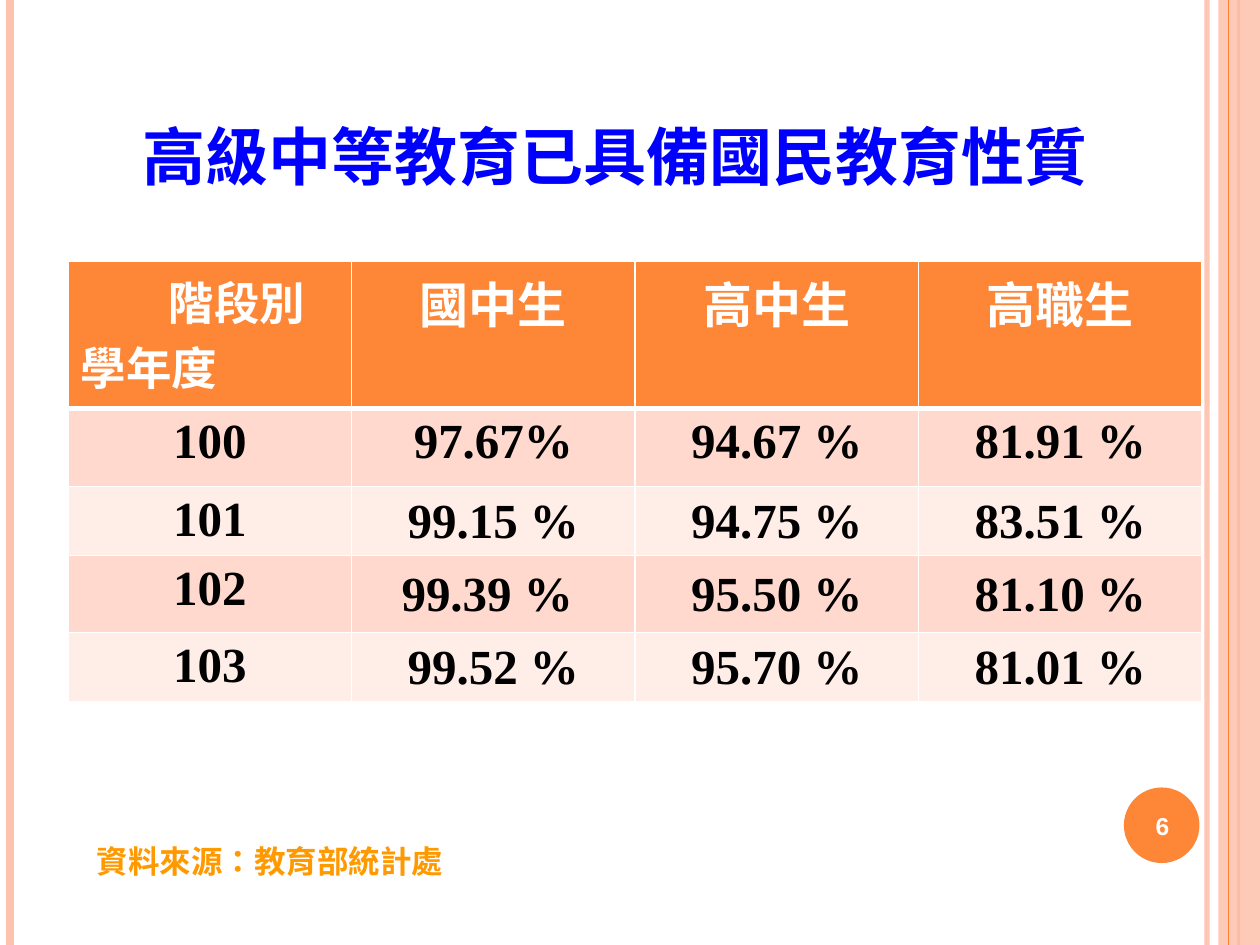
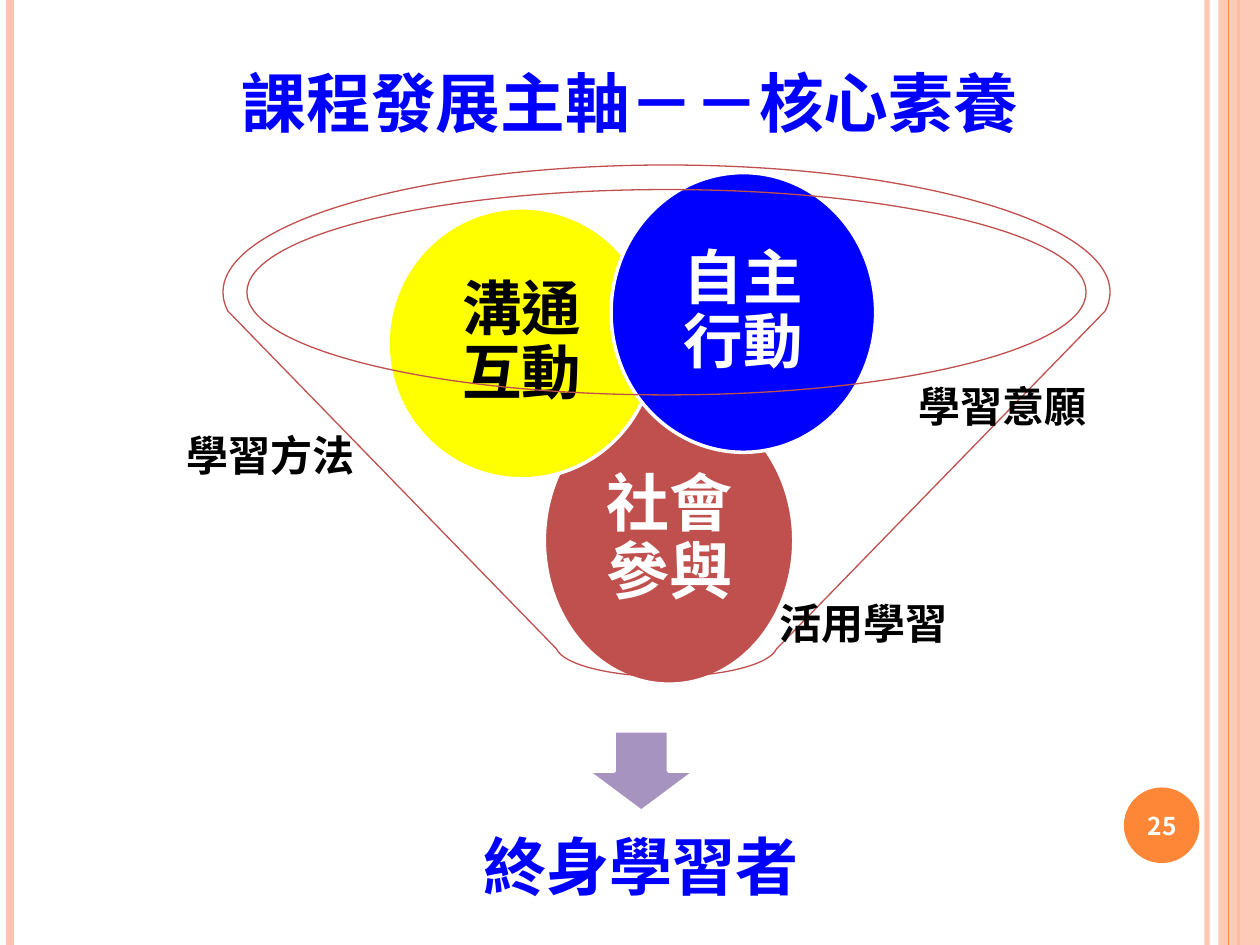
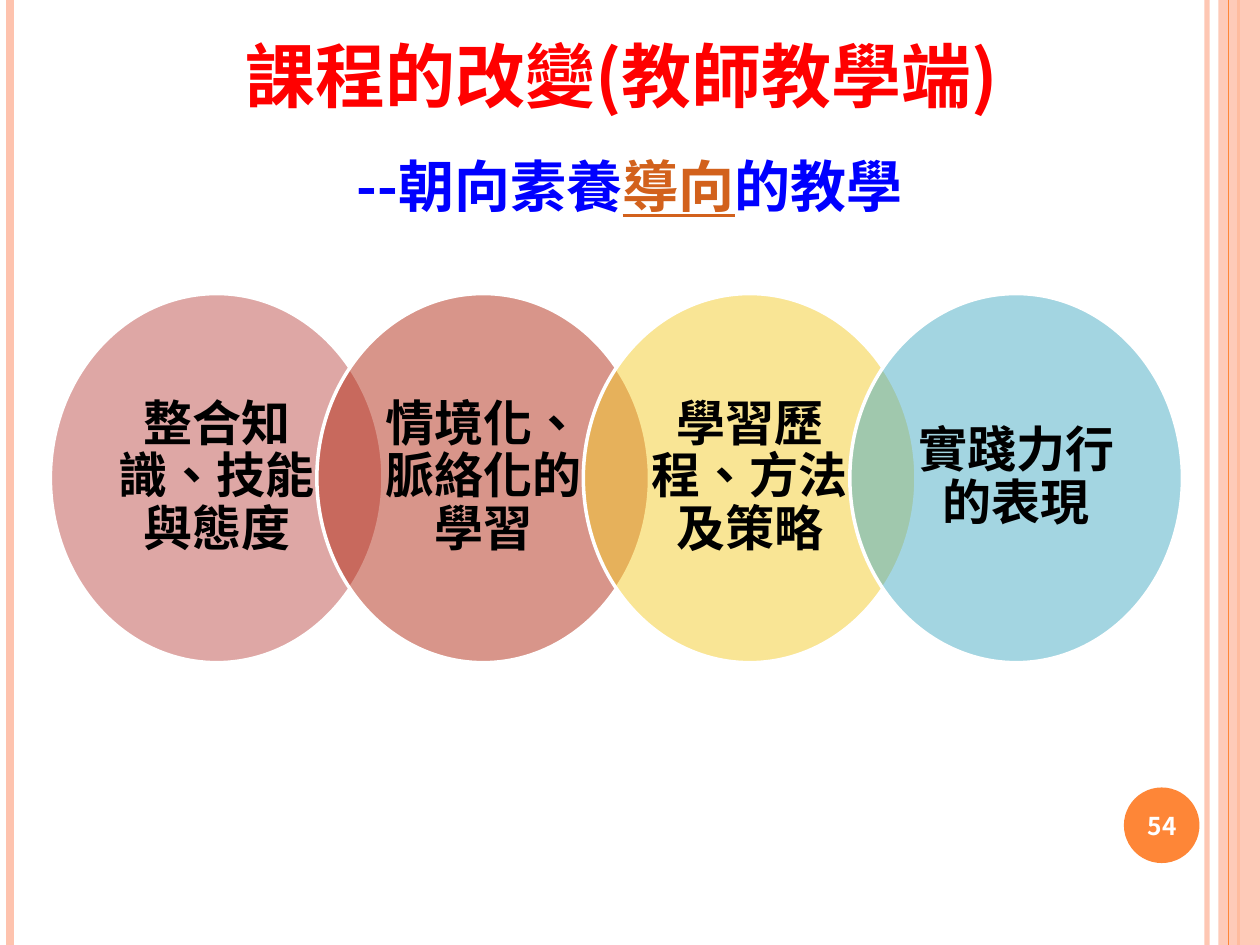
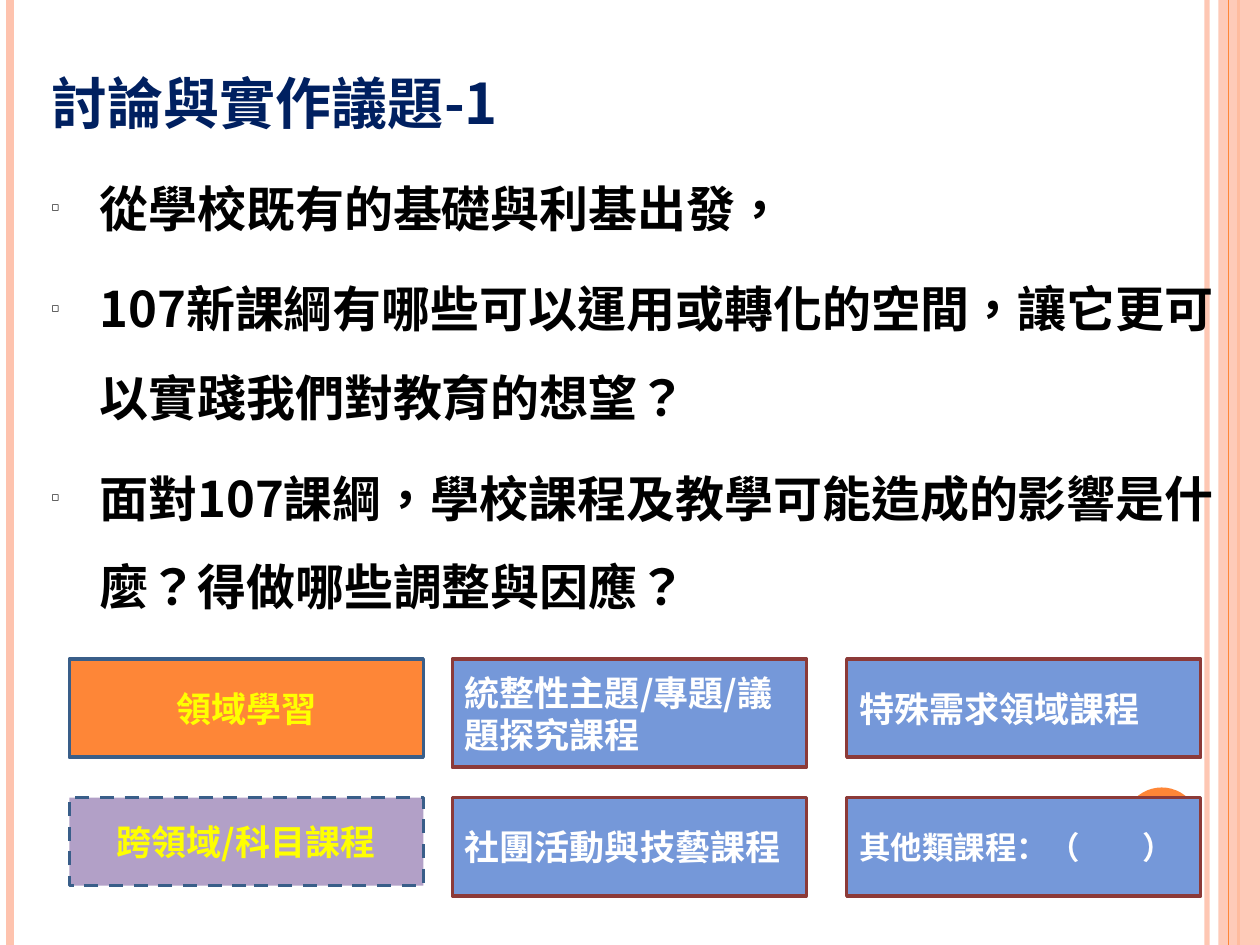
from math import cos, radians, sin, tan

from lxml import etree
from pptx import Presentation
from pptx.dml.color import RGBColor
from pptx.enum.dml import MSO_LINE
from pptx.enum.shapes import MSO_CONNECTOR, MSO_SHAPE
from pptx.enum.text import MSO_ANCHOR, MSO_AUTO_SIZE, PP_ALIGN
from pptx.oxml.ns import qn
from pptx.util import Inches, Pt

LEFT, CENTER = PP_ALIGN.LEFT, PP_ALIGN.CENTER
TOP, MIDDLE = MSO_ANCHOR.TOP, MSO_ANCHOR.MIDDLE
NO_AUTOFIT = MSO_AUTO_SIZE.NONE
STRAIGHT = MSO_CONNECTOR.STRAIGHT
OVAL, BOX, DOWN_ARROW = MSO_SHAPE.OVAL, MSO_SHAPE.RECTANGLE, MSO_SHAPE.DOWN_ARROW
DASH = MSO_LINE.DASH

SANS, SERIF, PLAIN = "Noto Sans CJK SC", "Times New Roman", "Arial"
TAIWAN, MAINLAND = "zh-TW", "zh-CN"
WHITE, BLACK, BLUE, RED, YELLOW = "FFFFFF", "000000", "0000FF", "FF0000", "FFFF00"
ORANGE, PEACH, NAVY, LINK, GOLD = "FE8637", "FEC3AE", "002060", "D2611C", "FF9900"
BRICK, LILAC = "BF504D", "A793BF"
PERIWINKLE, MAROON, STEEL, LAVENDER = "7598D9", "8C3A38", "395E89", "B2A0C7"

RULES = [
    (9.58, PEACH, 3, 93),
    (0.08, PEACH, 4.5, 100),
    (9.83, ORANGE, 1.5, 100),
    (9.75, ORANGE, 0.75, 100),
]

ENROLMENT_TITLE = "高級中等教育已具備國民教育性質"
ENROLMENT_HEAD = ["國中生", "高中生", "高職生"]
ENROLMENT_AXES = ["階段別", "學年度"]
ENROLMENT = [
    ["100", "97.67%", "94.67 %", "81.91 %"],
    ["101", "99.15 %", "94.75 %", "83.51 %"],
    ["102", "99.39 % ", "95.50 %", "81.10 %"],
    ["103", "99.52 %", "95.70 %", "81.01 %"],
]
ENROLMENT_HEIGHTS = [1.17, 0.62, 0.55, 0.61, 0.55]
ENROLMENT_BANDS = ["FFD9CE", "FFEDE8"]
ENROLMENT_SOURCE = "資料來源：教育部統計處"

LITERACY_TITLE = "課程發展主軸－－核心素養"
LITERACIES = [
    ("社會參與", (4.32, 3.15, 1.98, 2.28), BRICK, WHITE, 36),
    ("溝通互動", (3.08, 1.65, 2.12, 2.15), YELLOW, BLACK, 34),
    ("自主行動", (4.85, 1.37, 2.1, 2.22), BLUE, WHITE, 34),
]
LEARNING = [
    ("學習意願", 7.19, 2.97, LEFT),
    ("學習方法", 1.25, 3.36, CENTER),
    ("活用學習", 6.09, 4.69, LEFT),
]
LITERACY_GOAL = "終身學習者"

TEACHING_TITLE = "課程的改變(教師教學端)"
TEACHING_SUBTITLE = [("--朝向素養", {}), ("導向", {"color": LINK, "underline": True}), ("的教學", {})]
TEACHING = [
    ("整合知識、技能與態度", BRICK),
    ("情境化、脈絡化的學習", "B32C16"),
    ("學習歷程、方法及策略", "F5CD2D"),
    ("實踐力行的表現", "49ACC5"),
]

DISCUSSION_TITLE = "討論與實作議題-1"
DISCUSSION = [
    "從學校既有的基礎與利基出發，",
    "107新課綱有哪些可以運用或轉化的空間，讓它更可以實踐我們對教育的想望？",
    "面對107課綱，學校課程及教學可能造成的影響是什麼？得做哪些調整與因應？",
]
COURSE_LEFTS, COURSE_TOPS = [0.55, 3.59, 6.72], [5.23, 6.33]
COURSES = [
    [("領域學習", 0.78, 20), ("統整性主題/專題/議題探究課程", 0.86, 20), ("特殊需求領域課程", 0.78, 20)],
    [("跨領域/科目課程", 0.7, 20), ("社團活動與技藝課程", 0.78, 20), ("其他類課程：（\t）", 0.78, 18)],
]


def rgb(color):
    return RGBColor.from_string(color)


def place(shape, area):
    shape.left, shape.top, shape.width, shape.height = map(Inches, area)


def add_child(parent, tag, **attributes):
    return etree.SubElement(parent, qn(tag), attributes)


def fade(shape, percent):
    color = shape.element.spPr.find(".//" + qn("a:srgbClr"))
    add_child(color, "a:alpha", val=str(percent * 1000))


def add_run(paragraph, text, size, color, font=SANS, underline=None, language=TAIWAN):
    run = paragraph.add_run()
    run.text = text
    run.font.size, run.font.bold = Pt(size), True
    run.font.color.rgb = rgb(color)
    run.font.underline = underline
    run.font.name = font
    properties = run.font._element
    properties.set("lang", language)
    add_child(properties, "a:ea", typeface=SANS)


def set_frame(frame, anchor, insets=(0.1, 0.05)):
    frame.word_wrap = True
    frame.auto_size = NO_AUTOFIT
    frame.vertical_anchor = anchor
    frame.margin_left = frame.margin_right = Inches(insets[0])
    frame.margin_top = frame.margin_bottom = Inches(insets[1])


def write(shape, text, size, color, font=SANS, align=CENTER, anchor=MIDDLE,
          insets=(0.1, 0.05), spacing=None, language=TAIWAN):
    set_frame(shape.text_frame, anchor, insets)
    paragraph = shape.text_frame.paragraphs[0]
    paragraph.alignment = align
    paragraph.line_spacing = spacing
    add_run(paragraph, text, size, color, font, language=language)
    return paragraph


def add_label(slide, area, text, size, color, **style):
    write(slide.shapes.add_textbox(*map(Inches, area)), text, size, color, **style)


def set_title(slide, area, text, size, color, **style):
    place(slide.shapes.title, area)
    write(slide.shapes.title, text, size, color, **style)


def add_block(slide, kind, area, fill, line=None):
    block = slide.shapes.add_shape(kind, *map(Inches, area))
    block.shadow.inherit = False
    block.fill.solid()
    block.fill.fore_color.rgb = rgb(fill)
    if line:
        block.line.color.rgb = rgb(line)
        block.line.width = Pt(2)
    else:
        block.line.fill.background()
    return block


def add_rule(slide, x, color, width, opacity):
    rule = slide.shapes.add_connector(STRAIGHT, Inches(x), 0, Inches(x), Inches(7.5))
    rule.line.color.rgb = rgb(color)
    rule.line.width = Pt(width)
    add_child(rule.element.spPr, "a:effectLst")
    if opacity < 100:
        fade(rule, opacity)
    return rule


def decorate_master(prs, slide):
    rules = [add_rule(slide, *rule) for rule in RULES]
    band = add_block(slide, BOX, (9.67, 0, 0.33, 7.5), PEACH)
    fade(band, 87)
    disc = add_block(slide, OVAL, (8.92, 6.25, 0.6, 0.6), ORANGE)
    tree = prs.slide_master.shapes.element
    for index, part in enumerate([*rules[:3], band, rules[3], disc]):
        part.element.xpath(".//p:cNvPr")[0].set("id", str(100 + index))
        tree.insert(2 + index, part.element)


def add_number(slide, number, font=SANS):
    add_label(slide, (8.89, 6.27, 0.67, 0.57), number, 14, WHITE, font=font)


def add_borders(cell, row, column):
    edges = [
        ("a:lnL", column > 0, 1),
        ("a:lnR", column < len(ENROLMENT_HEAD), 1),
        ("a:lnT", row > 0, 3 if row == 1 else 1),
        ("a:lnB", row < len(ENROLMENT), 3 if row == 0 else 1),
    ]
    for tag, inner, width in edges:
        if inner:
            edge = add_child(cell._tc.get_or_add_tcPr(), tag, w=str(Pt(width)))
            add_child(add_child(edge, "a:solidFill"), "a:srgbClr", val=WHITE)


def fill_cell(table, row, column, fill, text=None, color=BLACK):
    cell = table.cell(row, column)
    add_borders(cell, row, column)
    cell.fill.solid()
    cell.fill.fore_color.rgb = rgb(fill)
    if text:
        paragraph = cell.text_frame.paragraphs[0]
        paragraph.alignment = CENTER
        add_run(paragraph, text, 28, color, SERIF)
    return cell


def build_enrolment(slide):
    set_title(slide, (0.38, 0.76, 9, 0.95), ENROLMENT_TITLE, 36, BLUE, font=SERIF)
    area = (0.54, 2.07, 9, sum(ENROLMENT_HEIGHTS))
    table = slide.shapes.add_table(5, 4, *map(Inches, area)).table
    for row, height in zip(table.rows, ENROLMENT_HEIGHTS):
        row.height = Inches(height)

    corner = fill_cell(table, 0, 0, ORANGE)
    stage = corner.text_frame.paragraphs[0]
    stage._p.get_or_add_pPr().set("marL", str(Inches(0.7)))
    for paragraph, axis in zip([stage, corner.text_frame.add_paragraph()], ENROLMENT_AXES):
        add_run(paragraph, axis, 26, WHITE, SERIF)
    for column, head in enumerate(ENROLMENT_HEAD, 1):
        fill_cell(table, 0, column, ORANGE, head, WHITE)

    for row, values in enumerate(ENROLMENT, 1):
        for column, value in enumerate(values):
            cell = fill_cell(table, row, column, ENROLMENT_BANDS[(row - 1) % 2], value)
            if row > 1 and column > 0:
                cell.vertical_anchor = MIDDLE
                cell.margin_left = cell.margin_right = cell.margin_top = Inches(0.01)
                cell.margin_bottom = 0

    add_number(slide, "6", PLAIN)
    add_label(slide, (0.67, 6.63, 3.07, 0.4), ENROLMENT_SOURCE, 18, GOLD,
              font=SERIF, align=LEFT, anchor=TOP)


def arc(middle, radii, stops):
    points = []
    for start, end in zip(stops, stops[1:]):
        first, last = radians(start), radians(end)
        pull = 4 / 3 * tan((last - first) / 4)
        for angle, lean in [(first, pull), (last, -pull), (last, 0)]:
            x = cos(angle) - lean * sin(angle)
            y = sin(angle) + lean * cos(angle)
            points.append((Inches(middle[0] + radii[0] * x), Inches(middle[1] + radii[1] * y)))
    return points


def bend(lines):
    for first, second, third in zip(lines[::3], lines[1::3], lines[2::3]):
        curve = etree.Element(qn("a:cubicBezTo"))
        first.addprevious(curve)
        for line in (first, second, third):
            curve.append(line[0])
            line.getparent().remove(line)


def add_funnel(slide):
    rim_middle, rim_radii = (5.29, 2.32), (3.52, 1.01)
    spout_middle, spout_radii = (5.29, 5.12), (0.88, 0.25)
    mouth_radii = (3.33, 0.815)
    rim_start = arc(rim_middle, rim_radii, [171.5, 171.5])[-1]
    rim = arc(rim_middle, rim_radii, [171.5, 180, 270, 360, 368.5])
    spout_start = arc(spout_middle, spout_radii, [7, 7])[-1]
    spout = arc(spout_middle, spout_radii, [7, 90, 173])
    mouth = arc(rim_middle, mouth_radii, [180, 270, 360, 450, 540])

    builder = slide.shapes.build_freeform(*rim_start, scale=1.0)
    builder.add_line_segments([*rim, spout_start, *spout], close=True)
    builder.move_to(*mouth[-1])
    builder.add_line_segments(mouth, close=True)
    funnel = builder.convert_to_shape()
    lines = list(funnel.element.spPr.iter(qn("a:lnTo")))
    bend(lines[:len(rim)] + lines[len(rim) + 1:])
    funnel.shadow.inherit = False
    funnel.fill.background()
    funnel.line.color.rgb = rgb(BRICK)
    funnel.line.width = Pt(0.75)


def build_literacy(slide):
    set_title(slide, (0.5, 0.31, 9, 0.99), LITERACY_TITLE, 37, BLUE)
    add_block(slide, DOWN_ARROW, (4.66, 5.8, 0.86, 0.64), LILAC, WHITE)
    add_label(slide, (3.03, 6.31, 4.12, 1.19), LITERACY_GOAL, 36, BLUE,
              insets=(0.28, 0.28), spacing=0.9)
    for text, area, fill, color, size in LITERACIES:
        write(add_block(slide, OVAL, area, fill, WHITE), text, size, color,
              insets=(0.05, 0.05), spacing=0.9)
    add_funnel(slide)
    for text, left, top, align in LEARNING:
        add_label(slide, (left, top, 1.8, 0.51), text, 24, BLACK, align=align, anchor=TOP)
    add_number(slide, "25")


def build_teaching(slide):
    set_title(slide, (1.85, 0.21, 6.46, 0.77), TEACHING_TITLE, 40, RED, align=LEFT, anchor=TOP)
    subtitle = slide.placeholders[1]
    place(subtitle, (0.9, 1.15, 8.2, 1.33))
    set_frame(subtitle.text_frame, TOP)
    paragraph = subtitle.text_frame.paragraphs[0]
    properties = paragraph._p.get_or_add_pPr()
    properties.set("marL", "0")
    properties.set("indent", "0")
    add_child(properties, "a:buNone")
    paragraph.alignment = CENTER
    paragraph.space_before = Pt(0)
    for text, style in TEACHING_SUBTITLE:
        add_run(paragraph, text, 32, **{"color": BLUE, **style})
    add_number(slide, "54")
    for index, (text, fill) in enumerate(TEACHING):
        circle = add_block(slide, OVAL, (0.4 + 2.115 * index, 2.33, 2.64, 2.93), fill, WHITE)
        fade(circle, 50)
        paragraph = write(circle, text, 28, BLACK, insets=(0.15, 0.04), spacing=0.9)
        paragraph._p.get_or_add_pPr().set("hangingPunct", "0")


def add_bullet(paragraph):
    properties = paragraph._p.get_or_add_pPr()
    properties.set("marL", str(Inches(0.38)))
    properties.set("indent", str(-Inches(0.38)))
    add_child(add_child(properties, "a:buClr"), "a:srgbClr", val=BLACK)
    add_child(properties, "a:buSzPct", val="25000")
    add_child(properties, "a:buChar", char="◻")


def build_discussion(slide):
    set_title(slide, (0.31, 0.23, 9.45, 0.9), DISCUSSION_TITLE, 32, NAVY,
              align=LEFT, anchor=TOP, spacing=1.5)
    questions = slide.placeholders[1]
    place(questions, (0.31, 1.13, 9.45, 5.57))
    frame = questions.text_frame
    set_frame(frame, TOP)
    for index, question in enumerate(DISCUSSION):
        paragraph = frame.add_paragraph() if index else frame.paragraphs[0]
        add_bullet(paragraph)
        paragraph.line_spacing = 1.5
        paragraph.space_before = Pt(7.2 if index else 0)
        add_run(paragraph, question, 28, BLACK)

    for row, (top, courses) in enumerate(zip(COURSE_TOPS, COURSES)):
        for column, (left, (text, height, size)) in enumerate(zip(COURSE_LEFTS, courses)):
            area = (left, top, 2.81, height)
            if column == 0:
                box = add_block(slide, BOX, area, LAVENDER if row else ORANGE, STEEL)
                write(box, text, size, YELLOW)
                if row:
                    box.line.dash_style = DASH
            else:
                box = add_block(slide, BOX, area, PERIWINKLE, MAROON)
                paragraph = write(box, text, size, WHITE, align=LEFT, language=MAINLAND)
                if "\t" in text:
                    tabs = add_child(paragraph._p.get_or_add_pPr(), "a:tabLst")
                    add_child(tabs, "a:tab", pos=str(Inches(2.25)), algn="l")


def main():
    prs = Presentation()
    prs.slide_width, prs.slide_height = Inches(10), Inches(7.5)
    title_and_body, title_only = prs.slide_layouts[1], prs.slide_layouts[5]
    pages = [
        (title_only, build_enrolment),
        (title_only, build_literacy),
        (title_and_body, build_teaching),
        (title_and_body, build_discussion),
    ]
    for index, (layout, build) in enumerate(pages):
        slide = prs.slides.add_slide(layout)
        if index == 0:
            decorate_master(prs, slide)
        build(slide)
    prs.save("out.pptx")


if __name__ == "__main__":
    main()
